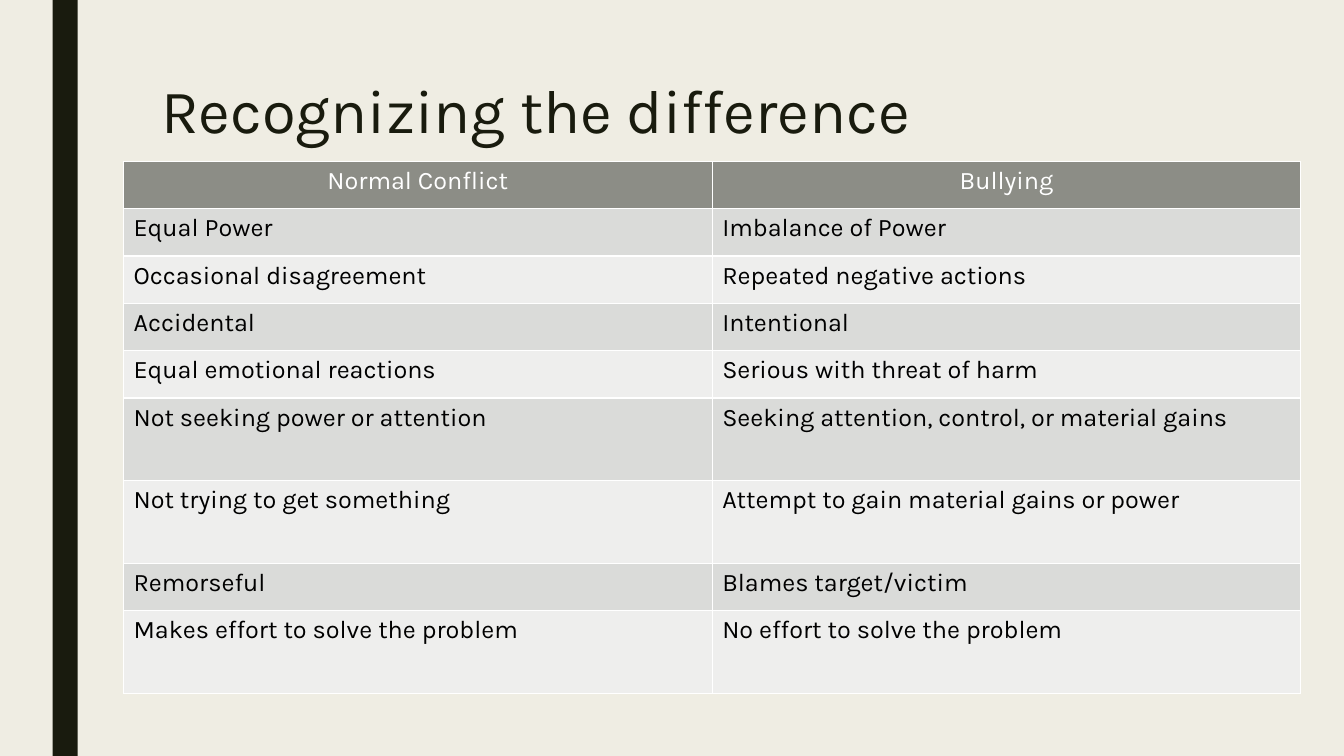
from lxml import etree
from pptx import Presentation
from pptx.dml.color import RGBColor
from pptx.enum.shapes import MSO_SHAPE
from pptx.enum.text import MSO_ANCHOR, PP_ALIGN
from pptx.oxml.ns import qn
from pptx.util import Pt

FONT = "Karla"
COLORS = {
    "background": "EFEDE3",
    "dark": "191B0E",
    "header": "8C8D86",
    "odd": "DADBD9",
    "even": "EEEEED",
    "white": "FFFFFF",
    "black": "000000",
}
ROWS = [
    ("Normal Conflict", "Bullying"),
    ("Equal Power", "Imbalance of Power"),
    ("Occasional disagreement", "Repeated negative actions"),
    ("Accidental", "Intentional"),
    ("Equal emotional reactions", "Serious with threat of harm"),
    ("Not seeking power or attention", "Seeking attention, control, or material gains"),
    ("Not trying to get something", "Attempt to gain material gains or power"),
    ("Remorseful", "Blames target/victim"),
    ("Makes effort to solve the problem", "No effort to solve the problem"),
]
TALL_ROWS = {5, 6, 8}
ROW_HEIGHT, TALL_HEIGHT = 33.8, 59.1
COLUMN_WIDTH = 420.5


def rgb(name):
    return RGBColor.from_string(COLORS[name])


def paint(fill, color):
    fill.solid()
    fill.fore_color.rgb = rgb(color)


def write(tf, text, size, color, align=PP_ALIGN.LEFT, spacing=1.0):
    p = tf.paragraphs[0]
    p.alignment, p.line_spacing = align, spacing
    r = p.add_run()
    r.text = text
    for name, value in {"name": FONT, "size": Pt(size), "bold": False}.items():
        setattr(r.font, name, value)
    r.font.color.rgb = rgb(color)


def add_side_bar(s):
    sp = s.shapes.add_shape(MSO_SHAPE.RECTANGLE, Pt(37.5), 0, Pt(18), Pt(540))
    sp.shadow.inherit = False
    paint(sp.fill, "dark")
    sp.line.fill.background()


def add_title(s, text):
    sp = s.shapes.title
    place = {"left": 108, "top": 54, "width": 756, "height": 116.6}
    for name, value in place.items():
        setattr(sp, name, Pt(value))
    sp.text_frame.vertical_anchor = MSO_ANCHOR.TOP
    write(sp.text_frame, text, 44, "dark", spacing=0.89)


def border_cell(cell, color, width):
    tc_pr = cell._tc.get_or_add_tcPr()
    for i, side in enumerate(("lnL", "lnR", "lnT", "lnB")):
        ln = etree.Element(qn(f"a:{side}"), w=str(Pt(width)))
        fill = etree.SubElement(ln, qn("a:solidFill"))
        etree.SubElement(fill, qn("a:srgbClr"), val=COLORS[color])
        tc_pr.insert(i, ln)


def add_comparison(s, rows):
    heights = [TALL_HEIGHT if i in TALL_ROWS else ROW_HEIGHT for i in range(len(rows))]
    table = s.shapes.add_table(
        len(rows), 2, Pt(88.2), Pt(115.3), Pt(2 * COLUMN_WIDTH), Pt(sum(heights))
    ).table
    for column in table.columns:
        column.width = Pt(COLUMN_WIDTH)
    for i, (texts, height) in enumerate(zip(rows, heights)):
        table.rows[i].height = Pt(height)
        for cell, text in zip(table.rows[i].cells, texts):
            if i == 0:
                paint(cell.fill, "header")
                write(cell.text_frame, text, 18, "white", PP_ALIGN.CENTER)
            else:
                paint(cell.fill, "odd" if i % 2 else "even")
                write(cell.text_frame, text, 18, "black")
            border_cell(cell, "white", 1)


def main():
    prs = Presentation()
    prs.slide_width, prs.slide_height = Pt(960), Pt(540)
    s = prs.slides.add_slide(prs.slide_layouts[5])
    paint(s.background.fill, "background")
    add_side_bar(s)
    add_title(s, "Recognizing the difference")
    add_comparison(s, ROWS)
    prs.save("out.pptx")


if __name__ == "__main__":
    main()
